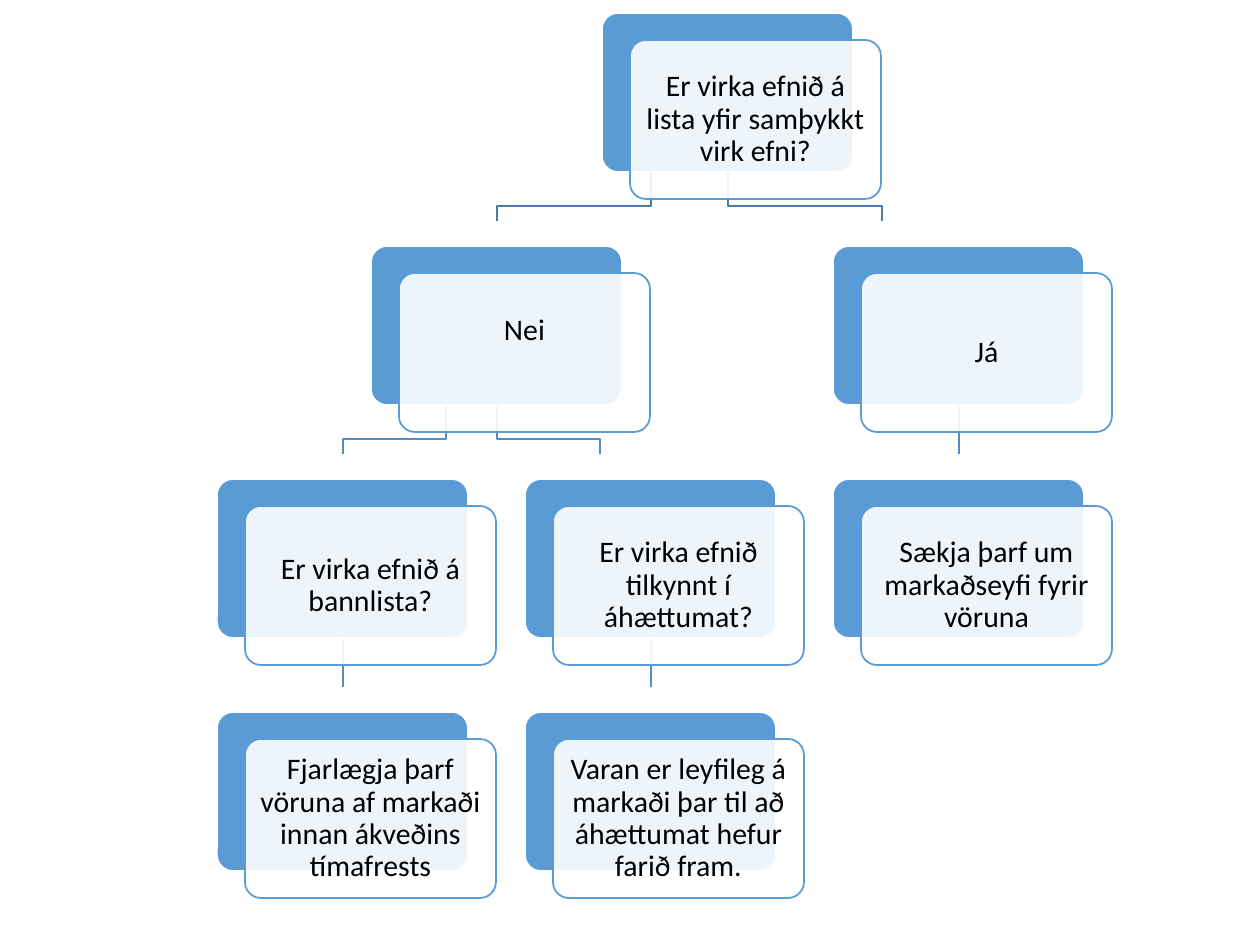
from dataclasses import dataclass

import pptx
import pptx.dml.color
import pptx.enum.shapes
import pptx.enum.text
import pptx.oxml
import pptx.oxml.ns
import pptx.util
from lxml import etree

EMU_PER_PX = 914400 / 126
SLIDE_W, SLIDE_H = 1260, 945
CARD_W, CARD_H = 251, 159
CENTRE = 126
SHIFT_X, SHIFT_Y = 28, 27
TOP, ROW_STEP = 13, 233
BEND, DROP = 34, 49
INSET = 9
NEI_LIFT = 43

ROOT_X, NEI_X, JA_X = 602, 371, 833
LEFT_X, MIDDLE_X = 217, 525

# left, row, text, extra bottom inset that lifts the text
CARDS = [
    (ROOT_X, 0, "Er virka efnið á lista yfir samþykkt virk efni?", 0),
    (NEI_X, 1, "Nei", NEI_LIFT),
    (LEFT_X, 2, "Er virka efnið á bannlista?", 0),
    (LEFT_X, 3, "Fjarlægja þarf vöruna af markaði innan ákveðins tímafrests", 0),
    (MIDDLE_X, 2, "Er virka efnið tilkynnt í áhættumat?", 0),
    (MIDDLE_X, 3, "Varan er leyfileg á markaði þar til að áhættumat hefur farið fram.", 0),
    (JA_X, 1, "Já", 0),
    (JA_X, 2, "Sækja þarf um markaðseyfi fyrir vöruna", 0),
]

# parent left, parent row, start and end measured from the parent's centre
BRANCHES = [
    (JA_X, 1, 0, 0),
    (ROOT_X, 0, 0, 154),
    (MIDDLE_X, 2, 0, 0),
    (NEI_X, 1, 0, 103),
    (LEFT_X, 2, 0, 0),
    (NEI_X, 1, -51, -154),
    (ROOT_X, 0, -77, -231),
]


@dataclass(frozen=True)
class Theme:
    blue: str = "5B9BD5"
    white: str = "FFFFFF"
    text: str = "000000"
    root_branch: str = "497CAB"
    branch: str = "538DC1"
    font: str = "Calibri"
    size: int = 17
    line: int = 1
    front_opacity: int = 90


THEME = Theme()


def px(n):
    return pptx.util.Emu(round(n * EMU_PER_PX))


def rgb(value):
    return pptx.dml.color.RGBColor.from_string(value)


def row_top(row):
    return TOP + row * ROW_STEP


def style_line(s, color):
    s.line.color.rgb = rgb(color)
    s.line.width = pptx.util.Pt(THEME.line)


def set_opacity(s, percent):
    color = s.fill._xPr.find(".//" + pptx.oxml.ns.qn("a:srgbClr"))
    etree.SubElement(color, pptx.oxml.ns.qn("a:alpha"), val=str(percent * 1000))


def add_branch(slide, left, row, start, end):
    """Draw the line from a card down to the next row, bent where the ends differ."""
    x1, x2 = left + CENTRE + start, left + CENTRE + end
    y = row_top(row) + CARD_H
    if x1 == x2:
        s = slide.shapes.add_connector(
            pptx.enum.shapes.MSO_CONNECTOR.STRAIGHT,
            px(x1), px(y), px(x2), px(y + DROP))
        etree.SubElement(s._element.spPr, pptx.oxml.ns.qn("a:effectLst"))
    else:
        builder = slide.shapes.build_freeform(x1, y, scale=EMU_PER_PX)
        builder.add_line_segments(
            [(x1, y + BEND), (x2, y + BEND), (x2, y + DROP)], close=False)
        s = builder.convert_to_shape()
        s.fill.background()
        s.shadow.inherit = False
    style_line(s, THEME.root_branch if row == 0 else THEME.branch)


def add_panel(slide, left, top, fill, line):
    s = slide.shapes.add_shape(
        pptx.enum.shapes.MSO_SHAPE.ROUNDED_RECTANGLE,
        px(left), px(top), px(CARD_W), px(CARD_H))
    s.adjustments[0] = 0.1
    s.shadow.inherit = False
    s.fill.solid()
    s.fill.fore_color.rgb = rgb(fill)
    style_line(s, line)
    return s


def add_text(s, text, lift):
    tf = s.text_frame
    tf.word_wrap = True
    tf.vertical_anchor = pptx.enum.text.MSO_ANCHOR.MIDDLE
    tf.margin_left = tf.margin_right = tf.margin_top = px(INSET)
    tf.margin_bottom = px(INSET + lift)
    p = tf.paragraphs[0]
    p.alignment = pptx.enum.text.PP_ALIGN.CENTER
    p.line_spacing = 0.9
    r = p.add_run()
    r.text = text
    r.font.name = THEME.font
    r.font.size = pptx.util.Pt(THEME.size)
    r.font.color.rgb = rgb(THEME.text)


def add_card(slide, left, row, text, lift):
    top = row_top(row)
    add_panel(slide, left, top, THEME.blue, THEME.white)
    front = add_panel(slide, left + SHIFT_X, top + SHIFT_Y, THEME.white, THEME.blue)
    set_opacity(front, THEME.front_opacity)
    add_text(front, text, lift)


def main():
    prs = pptx.Presentation()
    prs.slide_width, prs.slide_height = px(SLIDE_W), px(SLIDE_H)
    slide = prs.slides.add_slide(prs.slide_layouts[6])
    for branch in BRANCHES:
        add_branch(slide, *branch)
    for card in CARDS:
        add_card(slide, *card)
    prs.save("out.pptx")


if __name__ == "__main__":
    main()
